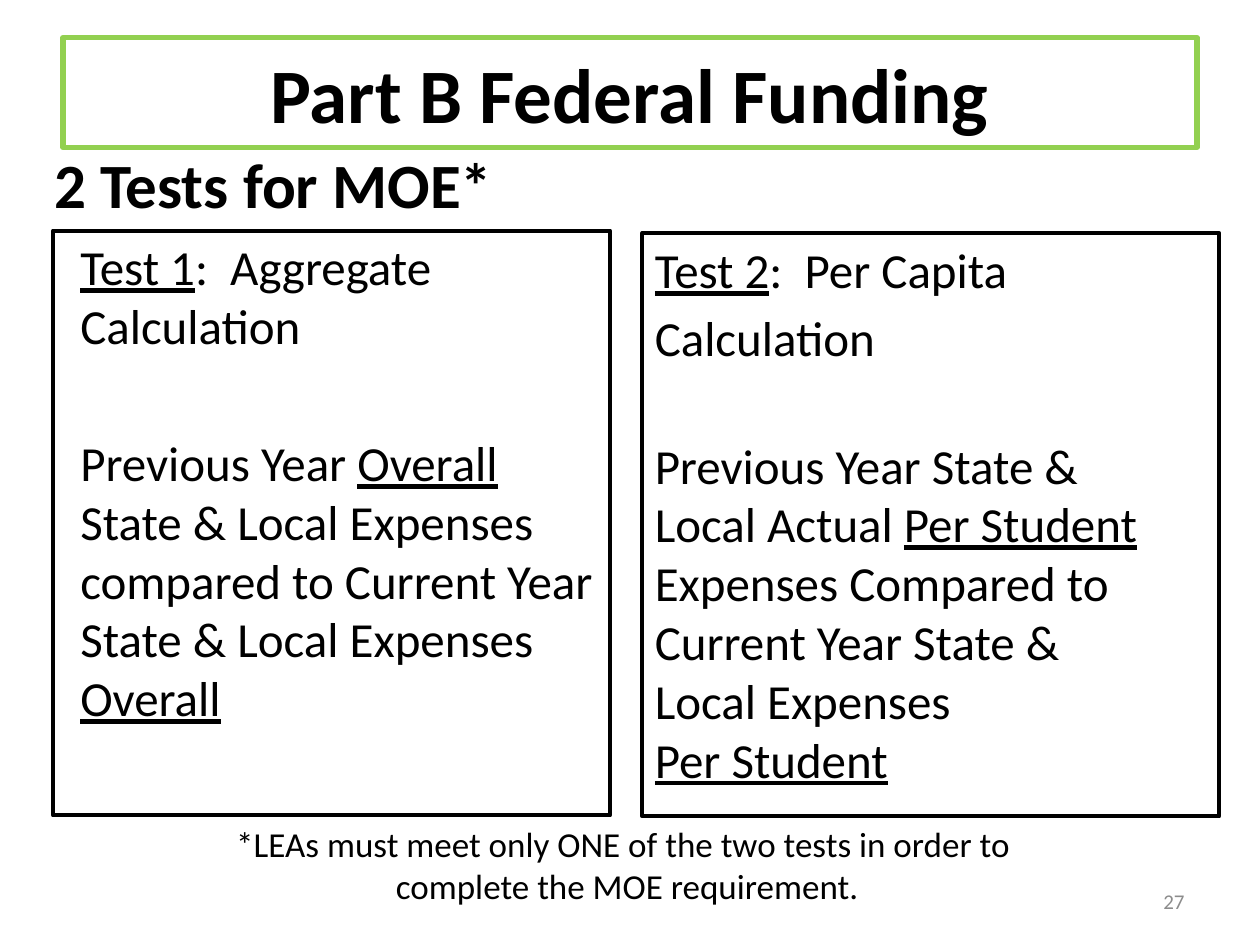
"""Build the slide on the two MOE tests for Part B federal funding."""
from pptx import Presentation
from pptx.dml.color import RGBColor
from pptx.enum.shapes import MSO_SHAPE
from pptx.enum.text import MSO_ANCHOR, PP_ALIGN
from pptx.util import Cm, Pt


def rgb(value):
    return RGBColor.from_string(value)


def add_block(box, paragraphs, size, color="000000", bold=False, border=None,
              align=PP_ALIGN.LEFT, anchor=MSO_ANCHOR.TOP, margin=0, indent=0):
    """Place text given as (space before, [(words, underlined)]) paragraphs."""
    place = [Cm(length) for length in box]
    if border:
        block = slide.shapes.add_shape(MSO_SHAPE.RECTANGLE, *place)
        block.shadow.inherit = False
        block.fill.background()
        block.line.color.rgb = rgb(border[0])
        block.line.width = Pt(border[1])
    else:
        block = slide.shapes.add_textbox(*place)
    frame = block.text_frame
    frame.word_wrap = True
    frame.vertical_anchor = anchor
    for index, (space, runs) in enumerate(paragraphs):
        paragraph = frame.add_paragraph() if index else frame.paragraphs[0]
        paragraph.alignment = align
        paragraph.space_before = Pt(space)
        if margin:
            properties = paragraph._p.get_or_add_pPr()
            properties.set("marL", str(Cm(margin)))
            properties.set("indent", str(Cm(indent)))
        for words, underlined in runs:
            run = paragraph.add_run()
            run.text = words
            run.font.name = "Calibri"
            run.font.size = Pt(size)
            run.font.bold = bold
            run.font.underline = underlined
            run.font.color.rgb = rgb(color)


presentation = Presentation()
presentation.slide_width = Cm(25.4)
presentation.slide_height = Cm(19.05)
slide = presentation.slides.add_slide(presentation.slide_layouts[6])

add_block((18.21, 17.65, 5.92, 1.02), [(0, [("27", False)])], 12, "8C8C8C",
          align=PP_ALIGN.RIGHT, anchor=MSO_ANCHOR.MIDDLE)
add_block((1.27, 0.76, 22.86, 2.21), [(0, [("Part B Federal Funding", False)])], 44,
          bold=True, border=("92D050", 3), align=PP_ALIGN.CENTER, anchor=MSO_ANCHOR.MIDDLE)
add_block((0.84, 2.74, 18.21, 1.91), [(0, [("2 Tests for MOE*", False)])], 36,
          bold=True, anchor=MSO_ANCHOR.MIDDLE)

aggregate_test = [
    (5.6, [("Test 1", True), (":  Aggregate Calculation", False)]),
    (44.5, [("Previous Year ", False), ("Overall", True),
            (" State & Local Expenses compared to Current Year State & Local Expenses ", False),
            ("Overall", True)]),
]
per_capita_test = [
    (5.6, [("Test 2", True), (":  Per Capita", False)]),
    (5.6, [("Calculation", False)]),
    (39, [("Previous Year State &", False)]),
    (0, [("Local Actual ", False), ("Per Student", True)]),
    (0, [("Expenses Compared to", False)]),
    (0, [("Current Year State &", False)]),
    (0, [("Local Expenses", False)]),
    (0, [("Per Student", True)]),
]
for box, test, margin, indent in [
    ((1.07, 4.65, 11.23, 11.79), aggregate_test, 0.3, 0),
    ((12.95, 4.7, 11.63, 11.76), per_capita_test, 0.95, -0.95),
]:
    add_block(box, test, 28, border=("000000", 2.25), margin=margin, indent=indent)

add_block((0.48, 16.46, 24.33, 1.96),
          [(0, [("*LEAs must meet only ONE of the two tests in order to ", False)]),
           (0, [("complete the MOE requirement.", False)])],
          20, align=PP_ALIGN.CENTER)

presentation.save("out.pptx")
